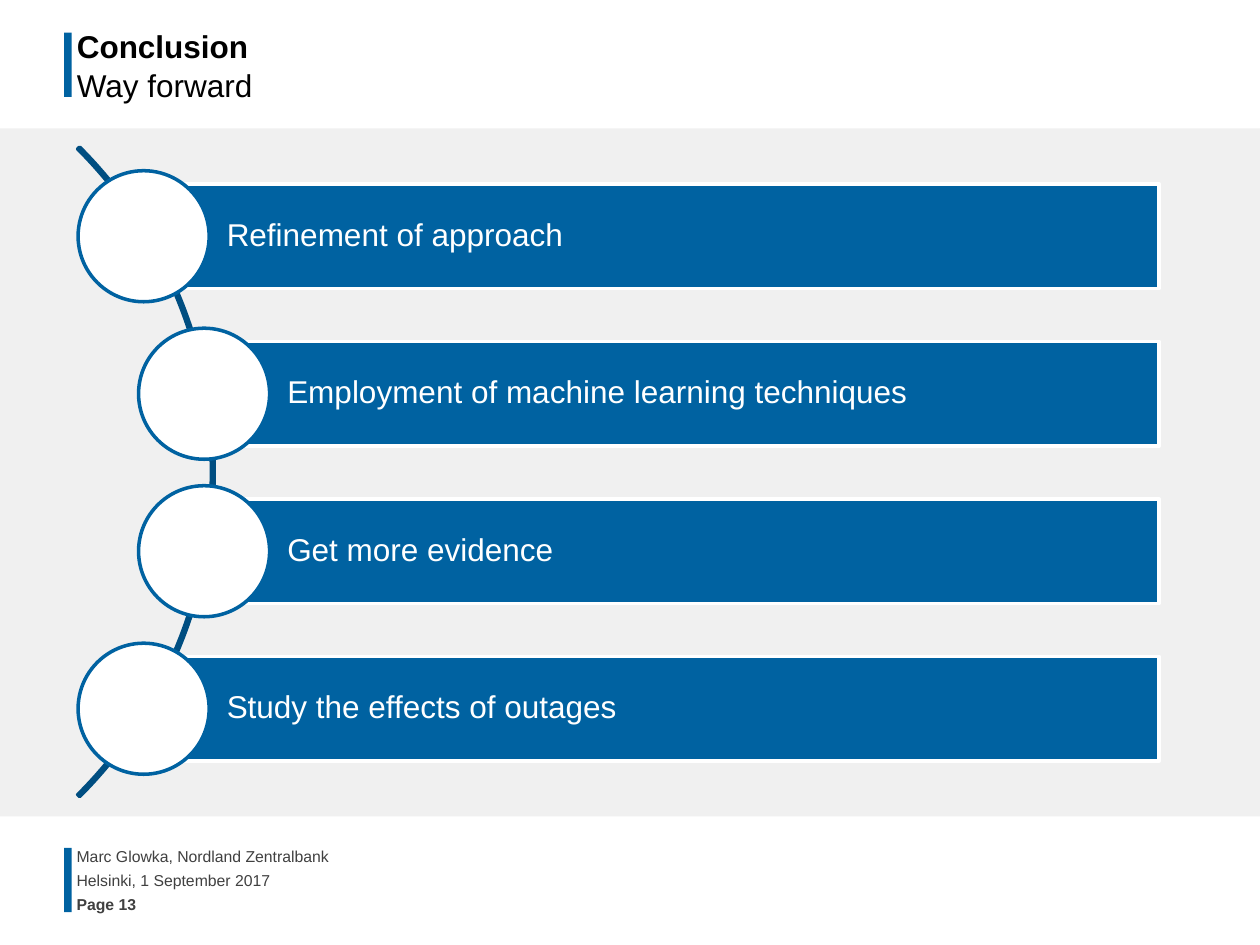
import dataclasses

import pptx
import pptx.dml.color
import pptx.enum.shapes
import pptx.enum.text
import pptx.util

Inches = pptx.util.Inches
Pt = pptx.util.Pt
Kind = pptx.enum.shapes.MSO_SHAPE
Anchor = pptx.enum.text.MSO_ANCHOR
Align = pptx.enum.text.PP_ALIGN

BLUE, WHITE, GREY = "0062A1", "FFFFFF", "404040"


@dataclasses.dataclass
class Item:
    label: str
    left: float


@dataclasses.dataclass
class Note:
    label: str
    top: float
    width: float
    bold: bool = False


ITEMS = [
    Item("Refinement of approach", 1.14),
    Item("Employment of machine learning techniques", 1.62),
    Item("Get more evidence", 1.62),
    Item("Study the effects of outages", 1.14),
]
NOTES = [
    Note("Marc Glowka, Nordland Zentralbank", 6.72, 5.91),
    Note("Helsinki, 1 September 2017", 6.91, 2.36),
    Note("Page 13", 7.1, 2.36, True),
]
RIGHT, TOP, PITCH, HEIGHT, DISC = 9.2, 1.46, 1.25, 0.83, 1.04


def color(code: str):
    return pptx.dml.color.RGBColor.from_string(code)


def shape(slide, kind, left: float, top: float, width: float, height: float,
          fill: str = "", line: str = ""):
    item = slide.shapes.add_shape(
        kind, Inches(left), Inches(top), Inches(width), Inches(height))
    item.shadow.inherit = False
    if fill:
        item.fill.solid()
        item.fill.fore_color.rgb = color(fill)
    else:
        item.fill.background()
    if line:
        item.line.color.rgb = color(line)
        item.line.width = Pt(2)
    else:
        item.line.fill.background()
    return item


def write(box, *runs: tuple[str, bool], size: float = 18, ink: str = "000000",
          inset: tuple = (0.1, 0.05, 0.1, 0.05), anchor=Anchor.TOP, space=None):
    """Fill a shape with (text, bold) runs, one to a line."""
    frame = box.text_frame
    frame.word_wrap = True
    frame.auto_size = pptx.enum.text.MSO_AUTO_SIZE.NONE
    frame.vertical_anchor = anchor
    (frame.margin_left, frame.margin_top,
     frame.margin_right, frame.margin_bottom) = map(Inches, inset)
    para = frame.paragraphs[0]
    para.alignment = Align.LEFT
    para.line_spacing = space
    for index, (label, bold) in enumerate(runs):
        if index:
            para.add_line_break()
        run = para.add_run()
        run.text = label
        run.font.name = "Arial"
        run.font.size = Pt(size)
        run.font.bold = bold
        run.font.color.rgb = color(ink)


def draw_item(slide, item: Item, top: float):
    bar = shape(slide, Kind.RECTANGLE, item.left, top, RIGHT - item.left,
                HEIGHT, BLUE, WHITE)
    write(bar, (item.label, False), ink=WHITE, anchor=Anchor.MIDDLE,
          inset=(0.66, 0.05, 0.05, 0.05), space=0.9)
    # Disc centred on the left end of the bar
    shape(slide, Kind.OVAL, item.left - DISC / 2, top + (HEIGHT - DISC) / 2,
          DISC, DISC, WHITE, BLUE)


def draw_note(slide, note: Note):
    box = slide.shapes.add_textbox(
        Inches(0.51), Inches(note.top), Inches(note.width), Inches(0.18))
    write(box, (note.label, note.bold), size=9, ink=GREY,
          inset=(0.1, 0, 0.1, 0))


def main():
    deck = pptx.Presentation()
    deck.slide_width, deck.slide_height = Inches(10), Inches(7.5)
    slide = deck.slides.add_slide(deck.slide_layouts[5])

    # Panel and accent marks
    shape(slide, Kind.RECTANGLE, 0, 1.02, 10, 5.46, "F0F0F0")
    for top in (0.26, 6.73):
        shape(slide, Kind.RECTANGLE, 0.51, top, 0.06, 0.51, BLUE)

    # Title
    title = slide.shapes.title
    title.left, title.top = Inches(0.51), Inches(0.16)
    title.width, title.height = Inches(8.98), Inches(0.71)
    write(title, ("Conclusion", True), ("Way forward", False), space=Pt(22))

    # Footer
    for note in NOTES:
        draw_note(slide, note)

    # Arc from 315 to 45 degrees, behind the list
    arc = shape(slide, Kind.BLOCK_ARC, -5.59, 0.1, 7.29, 7.29, line="004E81")
    for index, value in enumerate((189, 27, 0.003)):
        arc.adjustments[index] = value

    # List
    for index, item in enumerate(ITEMS):
        draw_item(slide, item, TOP + index * PITCH)

    deck.save("out.pptx")


if __name__ == "__main__":
    main()
